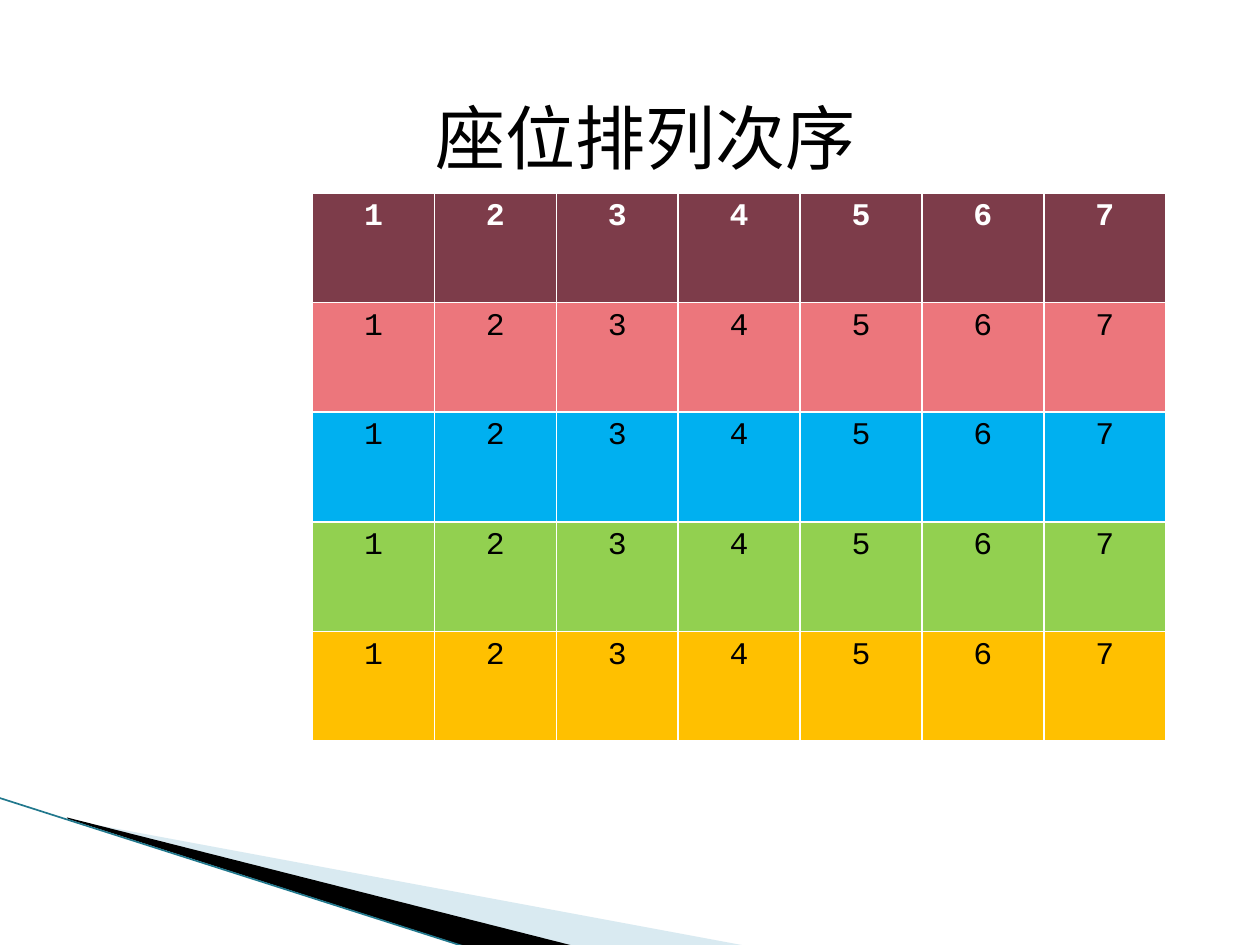
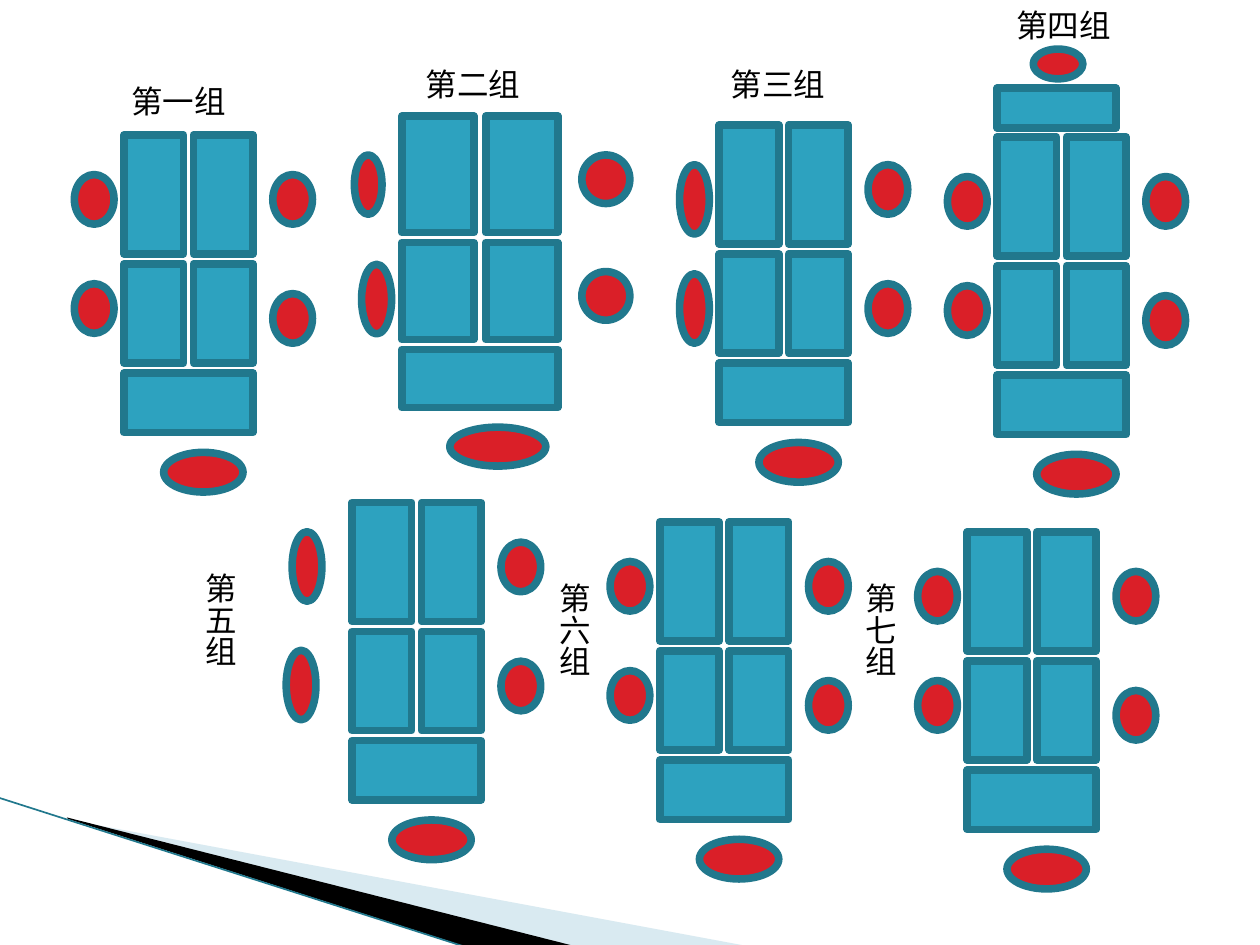
import dataclasses
import typing

import lxml.etree
import pptx
import pptx.dml.color
import pptx.enum.shapes
import pptx.enum.text
import pptx.oxml.ns
import pptx.util

Cm = pptx.util.Cm
Pt = pptx.util.Pt
qn = pptx.oxml.ns.qn
SHAPE = pptx.enum.shapes.MSO_SHAPE
ALIGN = pptx.enum.text.PP_ALIGN

COLORS = {
    "text": "000000", "white": "FFFFFF", "desk": "2DA2BF", "seat": "DA1F28",
    "edge": "21788D", "pale": "A0CBDC", "dark": "000000",
}
ROWS = ["7D3C4A", "EC767C", "00B0F0", "92D050", "FFC000"]
FONT = "Courier New"
TITLE = {"name": FONT, "size": Pt(40), "bold": False}
LABEL = {"name": FONT, "size": Pt(18)}
FRAME = {
    "word_wrap": True,
    "auto_size": pptx.enum.text.MSO_AUTO_SIZE.SHAPE_TO_FIT_TEXT,
    "vertical_anchor": pptx.enum.text.MSO_ANCHOR.TOP,
}


@dataclasses.dataclass(frozen=True)
class Box:
    """A rectangle in centimetres."""
    left: float
    top: float
    width: float
    height: float

    def lengths(self) -> list[pptx.util.Length]:
        return [Cm(side) for side in dataclasses.astuple(self)]


@dataclasses.dataclass(frozen=True)
class Band:
    color: str
    points: tuple[tuple[float, float], ...]
    alpha: int = 100


BANDS = (
    Band("pale", ((1.4, 16.53), (15.11, 19.08), (11.58, 19.08), (1.4, 16.51)), 40),
    Band("dark", ((1.35, 16.48), (11.61, 19.08), (9.45, 19.1), (1.37, 16.51))),
)
EDGE = (-0.03, 16.08, 9.42, 19.1)

# Desks and seats are placed from the top left corner of their group.
DESKS = tuple(
    Box(left, top, 1.2, height)
    for left in (0, 1.4) for top, height in ((0, 2.4), (2.6, 2))
) + (Box(0, 4.8, 2.6, 1.2),)
SEATS = (Box(0.8, 6.4, 1.6, 0.8), Box(3, 0.8, 0.8, 1), Box(3, 3.2, 0.8, 1))
ROUND = (Box(-1, 0.8, 0.8, 1), Box(-1, 3, 0.8, 1))
TALL = (Box(-0.8, 0.8, 0.6, 1.4), Box(-0.8, 3, 0.6, 1.4))


@dataclasses.dataclass(frozen=True)
class Group:
    name: str
    label: Box
    left: float
    top: float
    side: tuple[Box, ...] = ROUND
    desks: tuple[Box, ...] = ()
    seats: tuple[Box, ...] = ()
    wide: float = 1
    high: float = 1

    def place(self, box: Box) -> Box:
        return Box(
            self.left + box.left * self.wide, self.top + box.top * self.high,
            box.width * self.wide, box.height * self.high,
        )


GROUPS = (
    Group("第一组", Box(2.4, 1.52, 2.97, 1.02), 2.5, 2.72),
    Group("第二组", Box(8.33, 1.19, 2.77, 1.02), 8.1, 2.34, wide=1.21, high=0.98,
          side=(Box(-0.79, 0.8, 0.46, 1.22), Box(-0.67, 3.05, 0.5, 1.43))),
    Group("第三组", Box(14.48, 1.19, 2.97, 1.02), 14.5, 2.52, side=TALL),
    Group("第四组", Box(20.24, 0, 2.6, 1.02), 20.1, 2.76,
          desks=(Box(0, -0.98, 2.4, 0.8),), seats=(Box(0.73, -1.77, 1, 0.6),)),
    Group("第五组", Box(3.68, 11.3, 1.27, 2.77), 7.1, 10.13,
          side=(Box(-1.21, 0.59, 0.6, 1.4), Box(-1.33, 2.98, 0.6, 1.4))),
    Group("第六组", Box(10.82, 11.5, 1.27, 2.97), 13.3, 10.52),
    Group("第七组", Box(16.97, 11.5, 1.27, 2.6), 19.5, 10.72),
)


def rgb(value: str) -> pptx.dml.color.RGBColor:
    return pptx.dml.color.RGBColor.from_string(value)


def apply(target: typing.Any, values: dict[str, typing.Any]) -> None:
    for name, value in values.items():
        setattr(target, name, value)


def paint(target: typing.Any, value: str) -> None:
    target.fill.solid()
    target.fill.fore_color.rgb = rgb(value)


def write(frame: typing.Any, text: str, style: dict[str, typing.Any],
          color: str = "text", align: ALIGN = ALIGN.LEFT) -> None:
    frame.text = text
    para = frame.paragraphs[0]
    para.alignment = align
    apply(para.font, style)
    para.font.color.rgb = rgb(COLORS[color])


def draw_bands(slide: typing.Any) -> None:
    """Draw the swoosh in the lower left corner."""
    for band in BANDS:
        first, *rest = [(Cm(x), Cm(y)) for x, y in band.points]
        pen = slide.shapes.build_freeform(*first)
        pen.add_line_segments(rest)
        shape = pen.convert_to_shape()
        shape.shadow.inherit = False
        paint(shape, COLORS[band.color])
        shape.line.fill.background()
        if band.alpha < 100:
            tint = next(shape.element.spPr.iter(qn("a:srgbClr")))
            lxml.etree.SubElement(tint, qn("a:alpha"), val=str(band.alpha * 1000))
    line = slide.shapes.add_connector(
        pptx.enum.shapes.MSO_CONNECTOR.STRAIGHT, *[Cm(end) for end in EDGE])
    line.line.color.rgb = rgb(COLORS["edge"])
    line.line.width = Pt(0.95)
    lxml.etree.SubElement(line.element.spPr, qn("a:effectLst"))


def draw_piece(shapes: typing.Any, kind: SHAPE, box: Box, color: str) -> None:
    piece = shapes.add_shape(kind, *box.lengths())
    piece.shadow.inherit = False
    paint(piece, COLORS[color])
    piece.line.color.rgb = rgb(COLORS["edge"])
    piece.line.width = Pt(4.33)


def draw_group(slide: typing.Any, group: Group) -> None:
    shapes = slide.shapes.add_group_shape().shapes
    for box in DESKS + group.desks:
        draw_piece(shapes, SHAPE.RECTANGLE, group.place(box), "desk")
    for box in SEATS + group.side + group.seats:
        draw_piece(shapes, SHAPE.OVAL, group.place(box), "seat")


def draw_label(slide: typing.Any, group: Group) -> None:
    box = slide.shapes.add_textbox(*group.label.lengths())
    apply(box.text_frame, FRAME)
    if group.label.height > group.label.width:
        next(box.element.iter(qn("a:bodyPr"))).set("vert", "eaVert")
    write(box.text_frame, group.name, LABEL)


def draw_table(slide: typing.Any) -> None:
    box = Box(6.3, 3.89, 17.2, 11.05)
    table = slide.shapes.add_table(len(ROWS), len(GROUPS), *box.lengths()).table
    table.horz_banding = False
    for row, color in enumerate(ROWS):
        head = row == 0
        for col in range(len(GROUPS)):
            cell = table.cell(row, col)
            paint(cell, color)
            write(cell.text_frame, str(col + 1), LABEL | {"bold": head},
                  "white" if head else "text", ALIGN.CENTER)


def order_slide(deck: typing.Any) -> None:
    slide = deck.slides.add_slide(deck.slide_layouts[5])
    draw_bands(slide)
    draw_table(slide)
    title = slide.shapes.title
    sides = ("left", "top", "width", "height")
    apply(title, dict(zip(sides, Box(8.53, 1.78, 10.11, 1.96).lengths())))
    apply(title.text_frame, FRAME)
    write(title.text_frame, "座位排列次序", TITLE)


def room_slide(deck: typing.Any) -> None:
    slide = deck.slides.add_slide(deck.slide_layouts[6])
    draw_bands(slide)
    for group in GROUPS:
        draw_group(slide, group)
        draw_label(slide, group)


def main() -> None:
    deck = pptx.Presentation()
    apply(deck, {"slide_width": Cm(25.4), "slide_height": Cm(19.05)})
    order_slide(deck)
    room_slide(deck)
    deck.save("out.pptx")


if __name__ == "__main__":
    main()
